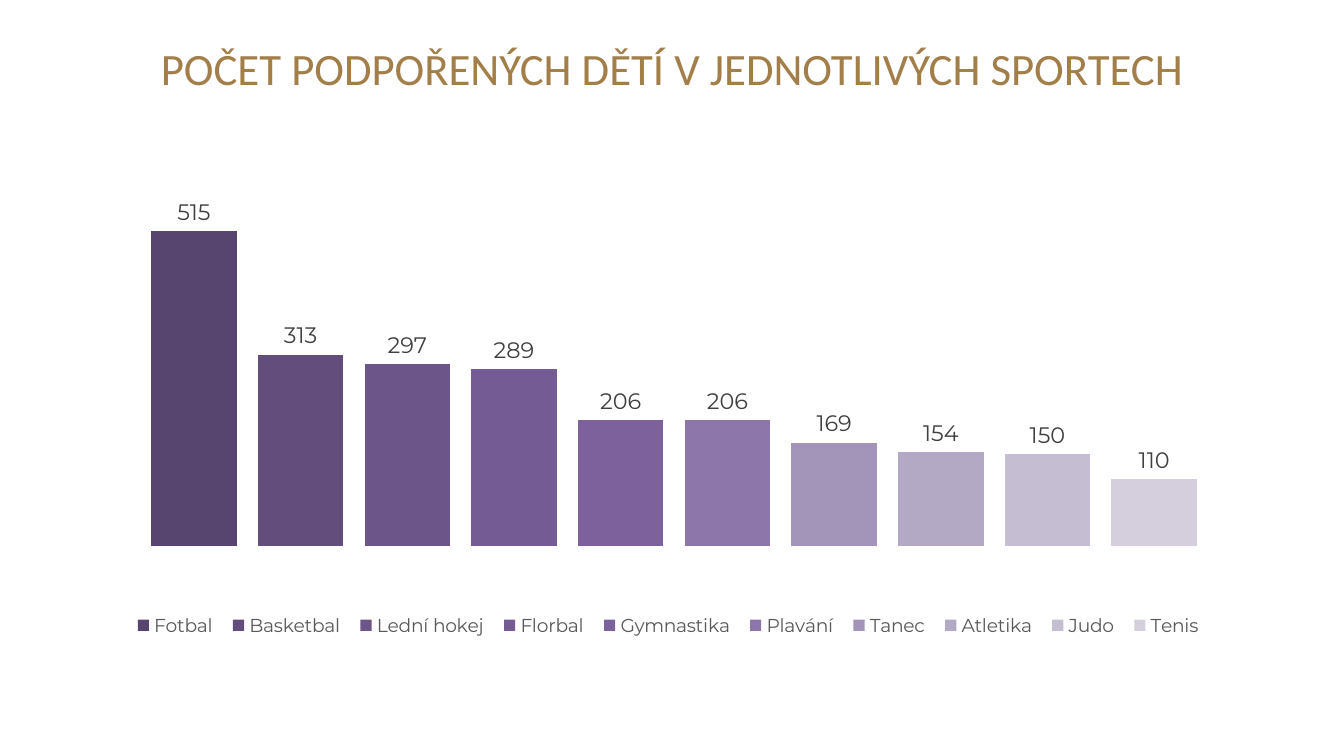
from dataclasses import dataclass

from lxml.etree import SubElement
from pptx import Presentation
from pptx.chart.data import CategoryChartData
from pptx.dml.color import RGBColor
from pptx.enum.chart import XL_CHART_TYPE, XL_LABEL_POSITION, XL_LEGEND_POSITION
from pptx.enum.text import MSO_ANCHOR, MSO_AUTO_SIZE, PP_ALIGN
from pptx.oxml import parse_xml
from pptx.oxml.ns import nsdecls, qn
from pptx.util import Pt

EMU_PER_PX = 914400 / 134.4


@dataclass(frozen=True)
class Theme:
    title_font: str = "Calibri"
    chart_font: str = "Montserrat"
    title_size: int = 24
    label_size: int = 12
    legend_size: int = 10
    title_color: str = "A27E48"
    label_color: str = "404040"
    legend_color: str = "595959"
    background: str = "FFFFFF"


THEME = Theme()

# sport, supported children, column colour
SPORTS = [
    ("Fotbal", 515, "58456F"),
    ("Basketbal", 313, "634D7D"),
    ("Lední hokej", 297, "6C5589"),
    ("Florbal", 289, "745B93"),
    ("Gymnastika", 206, "7C619D"),
    ("Plavání", 206, "8C76AA"),
    ("Tanec", 169, "A394B9"),
    ("Atletika", 154, "B4A9C5"),
    ("Judo", 150, "C5BDD2"),
    ("Tenis", 110, "D5CFDD"),
]


def px(*lengths):
    return [round(length * EMU_PER_PX) for length in lengths]


def manual_layout(inner=False, **fractions):
    """Return a c:layout element placed by fractions of the chart area."""
    layout = parse_xml(f"<c:layout {nsdecls('c')}><c:manualLayout/></c:layout>")
    settings = {"layoutTarget": "inner"} if inner else {}
    settings |= {"xMode": "edge", "yMode": "edge", **fractions}
    for tag, value in settings.items():
        SubElement(layout[0], qn(f"c:{tag}")).set("val", str(value))
    return layout


prs = Presentation()
prs.slide_width, prs.slide_height = px(1344, 756)
slide = prs.slides.add_slide(prs.slide_layouts[5])
slide.background.fill.solid()
slide.background.fill.fore_color.rgb = RGBColor.from_string(THEME.background)

# Title
title = slide.shapes.title
title.left, title.top, title.width, title.height = px(67, 31, 1210, 74)
frame = title.text_frame
frame.text = "POČET PODPOŘENÝCH DĚTÍ V JEDNOTLIVÝCH SPORTECH"
frame.word_wrap = True
frame.auto_size = MSO_AUTO_SIZE.NONE
frame.vertical_anchor = MSO_ANCHOR.MIDDLE
heading = frame.paragraphs[0]
heading.alignment = PP_ALIGN.CENTER

# Chart: one series per sport, so that each has its own legend entry
data = CategoryChartData()
data.categories = ["1"]
for sport, children, _ in SPORTS:
    data.add_series(sport, [children])
chart = slide.shapes.add_chart(
    XL_CHART_TYPE.COLUMN_CLUSTERED, *px(51, 179, 1210, 465), data
).chart
chart.has_title = False
chart.value_axis.minimum_scale = 0
chart.value_axis.maximum_scale = 600
chart.value_axis.has_major_gridlines = False
for axis in (chart.category_axis, chart.value_axis):
    axis.visible = False

columns = chart.plots[0]
columns.gap_width = 150
columns.overlap = -25
columns.vary_by_categories = False

chart.has_legend = True
legend = chart.legend
legend.position = XL_LEGEND_POSITION.TOP
legend.include_in_layout = False

fonts = [
    (heading.font, THEME.title_font, THEME.title_size, THEME.title_color),
    (legend.font, THEME.chart_font, THEME.legend_size, THEME.legend_color),
]
for series, (_, _, color) in zip(columns.series, SPORTS):
    series.format.fill.solid()
    series.format.fill.fore_color.rgb = RGBColor.from_string(color)
    series.invert_if_negative = False
    labels = series.data_labels
    labels.show_value = True
    labels.position = XL_LABEL_POSITION.OUTSIDE_END
    fonts.append((labels.font, THEME.chart_font, THEME.label_size, THEME.label_color))

for font, name, size, color in fonts:
    for attribute, value in {"name": name, "size": Pt(size), "bold": False}.items():
        setattr(font, attribute, value)
    font.color.rgb = RGBColor.from_string(color)

# Columns fill the upper part, the legend runs below them
plot_area = chart.element.find(f".//{qn('c:plotArea')}")
legend_position = chart.element.find(f".//{qn('c:legendPos')}")
for area in (plot_area, legend_position.getparent()):
    for automatic in area.findall(qn("c:layout")):
        area.remove(automatic)
plot_area.insert(0, manual_layout(inner=True, x=0.03, y=0, w=0.97, h=0.79))
legend_position.addnext(manual_layout(x=0.06, y=0.92, w=0.9, h=0.08))

prs.save("out.pptx")
